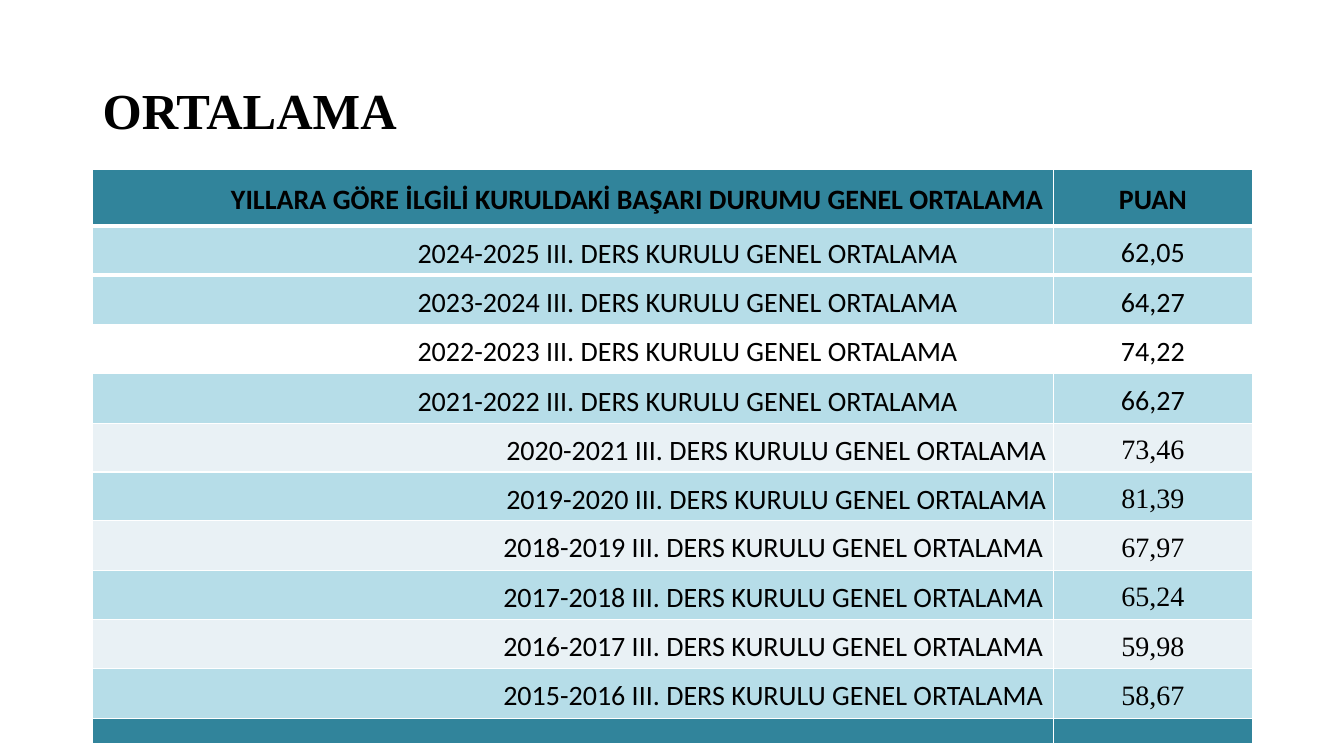
"""Build the slide listing the yearly board averages in a table."""

from dataclasses import dataclass

from lxml import etree
from pptx import Presentation
from pptx.dml.color import RGBColor
from pptx.enum.text import MSO_ANCHOR, PP_ALIGN
from pptx.oxml.ns import qn
from pptx.util import Inches, Pt

MIDDLE = MSO_ANCHOR.MIDDLE
LEFT, CENTER, RIGHT = PP_ALIGN.LEFT, PP_ALIGN.CENTER, PP_ALIGN.RIGHT
SANS, SERIF = "Calibri", "Times New Roman"
COLORS = {
    "ink": "000000",
    "border": "FFFFFF",
    "header": "31849B",
    "blue": "B6DDE8",
    "pale": "E9F1F5",
}
COLUMN_WIDTHS = (9.53, 1.97)
THIN, THICK = 1, 3


@dataclass(frozen=True)
class Margins:
    top: float = 0.05
    right: float = 0.1
    bottom: float = 0.05


NORMAL = Margins()
TIGHT = Margins(0.01, 0.07, 0)
INDENTED = Margins(0.01, 0.95, 0)
FLAT = Margins(0, 0.1, 0)


@dataclass(frozen=True)
class ScoreRow:
    label: str
    score: str
    fill: str | None
    margins: Margins = NORMAL
    score_font: str = SERIF
    height: float = 0.49
    bold: bool = False
    top_border: int = THIN
    bottom_border: int = THIN


def year_row(first_year: int, score: str, fill: str | None, **options) -> ScoreRow:
    label = f"{first_year}-{first_year + 1} III. DERS KURULU GENEL ORTALAMA"
    return ScoreRow(label, score, fill, **options)


ROWS = (
    ScoreRow("YILLARA GÖRE İLGİLİ KURULDAKİ BAŞARI DURUMU GENEL ORTALAMA", "PUAN",
             "header", score_font=SANS, height=0.56, bold=True, bottom_border=THICK),
    year_row(2024, "62,05", "blue", margins=INDENTED, score_font=SANS,
             top_border=THICK, bottom_border=THICK),
    year_row(2023, "64,27", "blue", margins=INDENTED, score_font=SANS, top_border=THICK),
    year_row(2022, "74,22", None, margins=INDENTED, score_font=SANS),
    year_row(2021, "66,27", "blue", margins=INDENTED, score_font=SANS),
    year_row(2020, "73,46", "pale", margins=TIGHT, height=0.46),
    year_row(2019, "81,39", "blue", margins=TIGHT, height=0.46),
    year_row(2018, "67,97", "pale"),
    year_row(2017, "65,24", "blue"),
    year_row(2016, "59,98", "pale"),
    year_row(2015, "58,67", "blue"),
    ScoreRow("", "", "header", margins=FLAT, height=0.25),
)


def write(para, text: str, font: str, size: int, bold: bool, align, spacing: float) -> None:
    para.alignment = align
    para.line_spacing = spacing
    span = para.add_run()
    span.text = text
    span.font.name = font
    span.font.size = Pt(size)
    span.font.bold = bold
    span.font.color.rgb = RGBColor.from_string(COLORS["ink"])


def set_borders(cell, top: int, bottom: int) -> None:
    properties = cell._tc.get_or_add_tcPr()
    for side, width in (("L", THIN), ("R", THIN), ("T", top), ("B", bottom)):
        line = etree.SubElement(properties, qn(f"a:ln{side}"), w=str(Pt(width)))
        fill = etree.SubElement(line, qn("a:solidFill"))
        etree.SubElement(fill, qn("a:srgbClr"), val=COLORS["border"])


def draw_cell(cell, text: str, font: str, align, margins: Margins, row: ScoreRow) -> None:
    set_borders(cell, row.top_border, row.bottom_border)
    if row.fill:
        cell.fill.solid()
        cell.fill.fore_color.rgb = RGBColor.from_string(COLORS[row.fill])
    else:
        cell.fill.background()
    cell.vertical_anchor = MIDDLE
    cell.margin_top = Inches(margins.top)
    cell.margin_right = Inches(margins.right)
    cell.margin_bottom = Inches(margins.bottom)
    para = cell.text_frame.paragraphs[0]
    if text:
        write(para, text, font, 20, row.bold, align, 1.15)
    else:
        etree.SubElement(para._p, qn("a:endParaRPr"), sz="800")


def draw_title(page) -> None:
    box = page.shapes.add_textbox(Inches(0.92), Inches(0.4), Inches(11.5), Inches(1.45))
    box.text_frame.word_wrap = True
    box.text_frame.vertical_anchor = MIDDLE
    write(box.text_frame.paragraphs[0], "ORTALAMA", SERIF, 36, True, LEFT, 0.9)


def draw_scores(page) -> None:
    height = sum(row.height for row in ROWS)
    frame = page.shapes.add_table(len(ROWS), len(COLUMN_WIDTHS), Inches(0.92), Inches(1.68),
                                  Inches(sum(COLUMN_WIDTHS)), Inches(height))
    table = frame.table
    for column, width in zip(table.columns, COLUMN_WIDTHS):
        column.width = Inches(width)
    for index, row in enumerate(ROWS):
        table.rows[index].height = Inches(row.height)
        score_margins = NORMAL if row.score else FLAT
        draw_cell(table.cell(index, 0), row.label, SANS, RIGHT, row.margins, row)
        draw_cell(table.cell(index, 1), row.score, row.score_font, CENTER, score_margins, row)


def main() -> None:
    deck = Presentation()
    deck.slide_width, deck.slide_height = Inches(13.33), Inches(7.5)
    page = deck.slides.add_slide(deck.slide_layouts[6])
    draw_title(page)
    draw_scores(page)
    deck.save("out.pptx")


if __name__ == "__main__":
    main()
